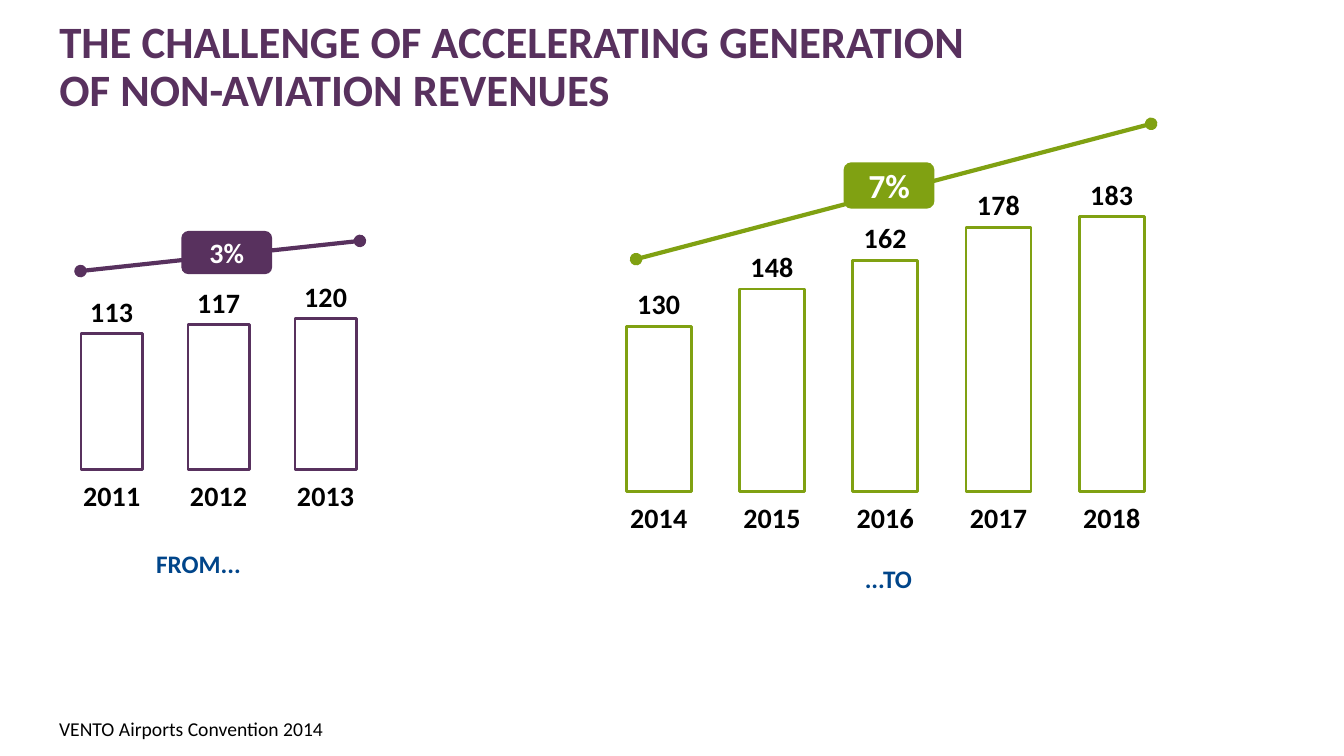
from dataclasses import dataclass

import lxml.etree
import pptx
import pptx.chart.data
import pptx.dml.color
import pptx.enum.chart
import pptx.enum.dml
import pptx.enum.shapes
import pptx.enum.text
import pptx.oxml
import pptx.oxml.ns
import pptx.util

Cm = pptx.util.Cm
Pt = pptx.util.Pt
qn = pptx.oxml.ns.qn


@dataclass(frozen=True)
class Theme:
    font: str = "Calibri"
    purple: str = "58315E"
    green: str = "80A112"
    blue: str = "00458A"
    black: str = "000000"
    white: str = "FFFFFF"
    title: int = 32
    large: int = 24
    label: int = 20
    caption: int = 18
    footer: int = 14


theme = Theme()

TITLE = "THE CHALLENGE OF ACCELERATING GENERATION \vOF NON-AVIATION REVENUES"
TITLE_BOX = (1.24, 0.36, 32.03, 1.17)
FOOTER = "VENTO Airports Convention 2014"
FOOTER_BOX = (1.24, 17.93, 11.43, 0.86)

PERIODS = [
    {
        "years": ["2014", "2015", "2016", "2017", "2018"],
        "revenues": [130, 148, 162, 178, 183],
        "scale_max": 190,
        "chart_box": (14.02, 4.04, 16.05, 11.18),
        "plot": (0.072, 0.095, 0.889, 0.651),
        "color": theme.green,
        "caption": "...TO",
        "caption_box": (17.35, 14.07, 10.08, 1.02),
        "trend": (16.03, 6.53, 29.01, 3.12),
        "growth": "7%",
        "growth_size": theme.large,
        "growth_box": (21.26, 4.09, 2.29, 1.17),
    },
    {
        "years": ["2011", "2012", "2013", "", ""],
        "revenues": [113, 117, 120, None, None],
        "scale_max": 200,
        "chart_box": (1.12, 2.9, 15.16, 12.55),
        "plot": (0.023, 0.061, 0.889, 0.651),
        "color": theme.purple,
        "caption": "FROM...",
        "caption_box": (0.51, 13.69, 8.99, 1.02),
        "trend": (2.03, 6.83, 9.07, 6.07),
        "growth": "3%",
        "growth_size": theme.label,
        "growth_box": (4.57, 5.82, 2.29, 1.09),
    },
]


def rgb(color):
    return pptx.dml.color.RGBColor.from_string(color)


def cm(lengths):
    return [Cm(n) for n in lengths]


def set_all(obj, values):
    for name, value in values.items():
        setattr(obj, name, value)


def style_font(font, size, color, bold=True):
    set_all(font, {"name": theme.font, "size": Pt(size), "bold": bold})
    font.color.rgb = rgb(color)


def write(sp, text, size, color, bold=True, align="LEFT", anchor="TOP"):
    tf = sp.text_frame
    set_all(tf, {
        "text": text,
        "word_wrap": True,
        "auto_size": pptx.enum.text.MSO_AUTO_SIZE.NONE,
        "vertical_anchor": getattr(pptx.enum.text.MSO_ANCHOR, anchor),
    })
    p = tf.paragraphs[0]
    p.alignment = getattr(pptx.enum.text.PP_ALIGN, align)
    for r in p.runs:
        style_font(r.font, size, color, bold)
    return p


def place_plot(chart, fractions):
    area = chart._chartSpace.find(".//" + qn("c:plotArea"))
    for old in area.findall(qn("c:layout")):
        area.remove(old)
    layout = pptx.oxml.parse_xml(
        "<c:layout %s><c:manualLayout/></c:layout>" % pptx.oxml.ns.nsdecls("c"))
    settings = [("layoutTarget", "inner"), ("xMode", "edge"), ("yMode", "edge")]
    settings += zip("xywh", map(str, fractions))
    for tag, value in settings:
        lxml.etree.SubElement(layout[0], qn("c:" + tag)).set("val", value)
    area.insert(0, layout)


def add_revenue_chart(s, period):
    data = pptx.chart.data.CategoryChartData(number_format="#,##0")
    data.categories = period["years"]
    data.add_series("Series 1", period["revenues"])
    kind = pptx.enum.chart.XL_CHART_TYPE.COLUMN_CLUSTERED
    chart = s.shapes.add_chart(kind, *cm(period["chart_box"]), data).chart
    set_all(chart, {"has_legend": False, "has_title": False})
    style_font(chart.font, theme.caption, theme.black, False)
    place_plot(chart, period["plot"])

    set_all(chart.value_axis, {
        "visible": False,
        "has_major_gridlines": False,
        "minimum_scale": 50,
        "maximum_scale": period["scale_max"],
    })
    axis = chart.category_axis
    axis.major_tick_mark = pptx.enum.chart.XL_TICK_MARK.OUTSIDE
    axis.format.line.fill.background()
    style_font(axis.tick_labels.font, theme.label, theme.black)

    plot = chart.plots[0]
    set_all(plot, {"gap_width": 74, "overlap": 41,
                   "vary_by_categories": False, "has_data_labels": True})
    set_all(plot.data_labels, {
        "show_value": True,
        "number_format": "#,##0",
        "number_format_is_linked": False,
        "position": pptx.enum.chart.XL_LABEL_POSITION.OUTSIDE_END,
    })
    style_font(plot.data_labels.font, theme.label, theme.black)
    bars = plot.series[0].format
    bars.fill.background()
    bars.line.color.rgb = rgb(period["color"])
    bars.line.width = Pt(2)


def add_growth(s, period):
    straight = pptx.enum.shapes.MSO_CONNECTOR.STRAIGHT
    trend = s.shapes.add_connector(straight, *cm(period["trend"]))
    trend.line.color.rgb = rgb(period["color"])
    trend.line.width = Pt(3)
    ln = trend.line._get_or_add_ln()
    for end in ("headEnd", "tailEnd"):
        lxml.etree.SubElement(ln, qn("a:" + end)).set("type", "oval")
    lxml.etree.SubElement(trend._element.spPr, qn("a:effectLst"))

    rounded = pptx.enum.shapes.MSO_SHAPE.ROUNDED_RECTANGLE
    badge = s.shapes.add_shape(rounded, *cm(period["growth_box"]))
    badge.shadow.inherit = False
    badge.fill.solid()
    badge.fill.fore_color.rgb = rgb(period["color"])
    badge.line.fill.background()
    write(badge, period["growth"], period["growth_size"], theme.white,
          align="CENTER", anchor="MIDDLE")


def main():
    prs = pptx.Presentation()
    set_all(prs, {"slide_width": Cm(33.87), "slide_height": Cm(19.05)})
    s = prs.slides.add_slide(prs.slide_layouts.get_by_name("Title Only"))

    title = s.shapes.title
    set_all(title, dict(zip(("left", "top", "width", "height"), cm(TITLE_BOX))))
    p = write(title, TITLE, theme.title, theme.purple)
    set_all(p, {"line_spacing": 0.9, "space_before": Pt(0)})

    for period in PERIODS:
        add_revenue_chart(s, period)
    footer = s.shapes.add_textbox(*cm(FOOTER_BOX))
    write(footer, FOOTER, theme.footer, theme.black, False, anchor="MIDDLE")
    for period in PERIODS:
        caption = s.shapes.add_textbox(*cm(period["caption_box"]))
        write(caption, period["caption"], theme.caption, theme.blue, align="CENTER")
        add_growth(s, period)
    prs.save("out.pptx")


if __name__ == "__main__":
    main()
